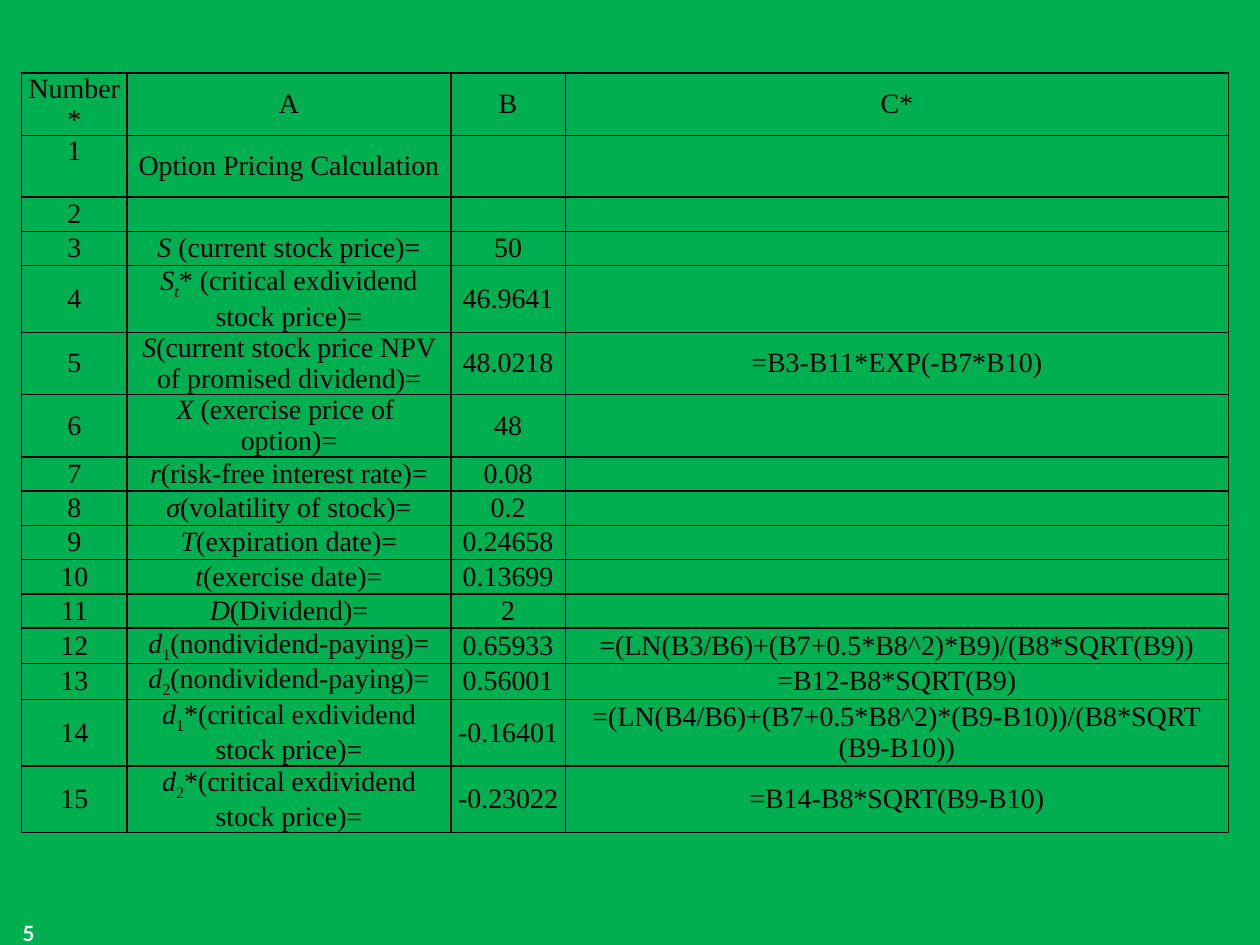
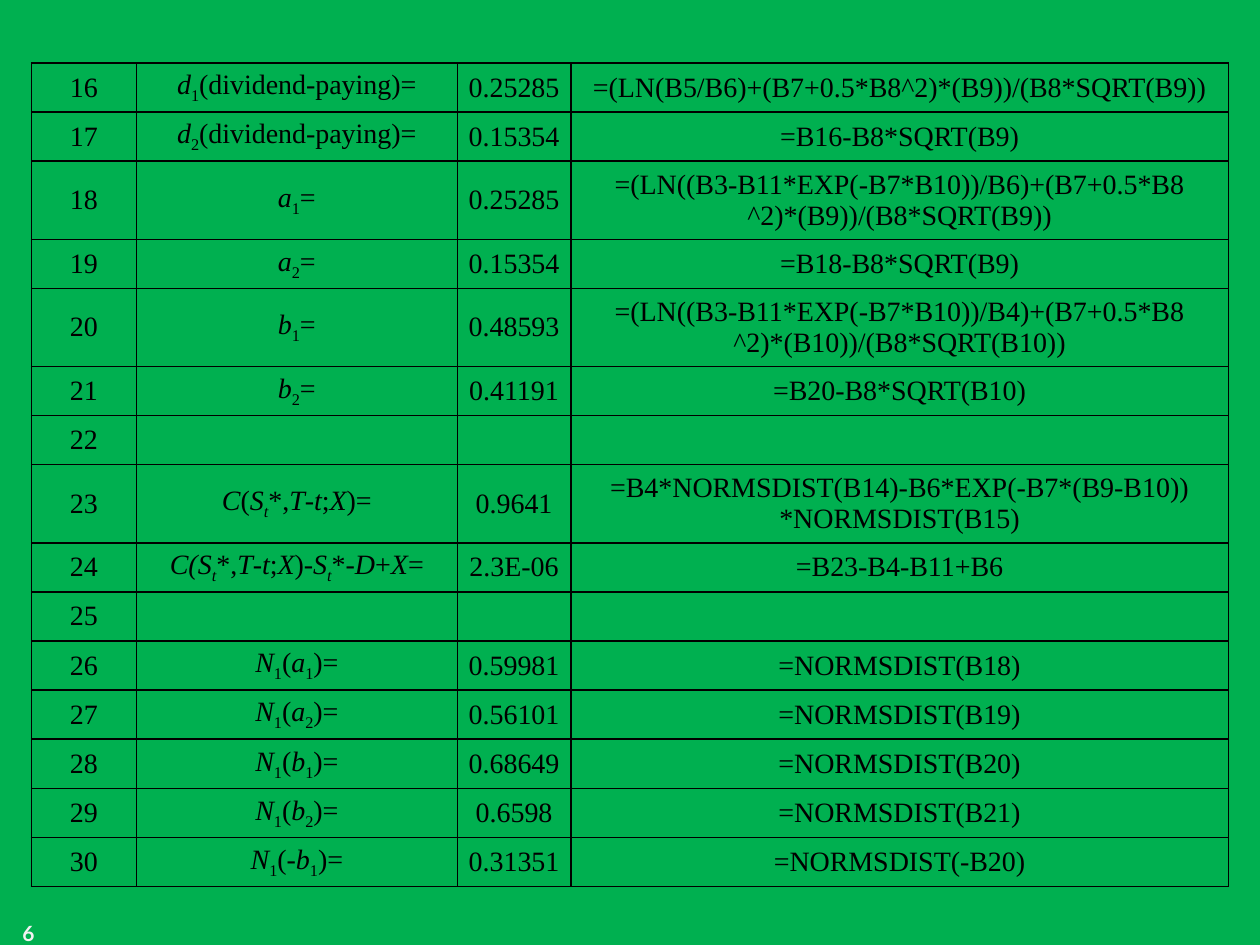
"""Build two slides that tabulate an option pricing worksheet."""
import dataclasses
import itertools

import lxml.etree
import pptx
import pptx.dml.color
import pptx.enum.text
import pptx.oxml.ns
import pptx.util


@dataclasses.dataclass(frozen=True)
class Theme:
    """Colours, fonts and sizes shared by the slides."""
    background: str = "00B050"
    ink: str = "000000"
    page_ink: str = "F2F2F2"
    table_font: str = "Times New Roman"
    page_font: str = "Lato"
    table_size: int = 16
    page_size: int = 12
    border: int = 1
    side_margin: float = 0.02
    subscript: int = -25000


THEME = Theme()
SLIDE_SIZE = (10, 7.5)
PAGE_NUMBER_BOX = (0.08, 7.26, 2.33, 0.4)
COLUMN_PERCENTS = (8.76, 26.82, 9.48, 54.94)

# In cell text, {braces} hold italics and _ lowers the next letter.
INPUT_ROWS = [
    ("Number*", "A", "B", "C*"),
    ("1", "Option Pricing Calculation", "", ""),
    ("2", "", "", ""),
    ("3", "{S} (current stock price)=", "50", ""),
    ("4", "{S_t}* (critical exdividend stock price)=", "46.9641", ""),
    ("5", "{S}(current stock price NPV of promised dividend)=", "48.0218", "=B3-B11*EXP(-B7*B10)"),
    ("6", "{X} (exercise price of \noption)=", "48", ""),
    ("7", "{r}(risk-free interest rate)=", "0.08", ""),
    ("8", "{σ}(volatility of stock)=", "0.2", ""),
    ("9", "{T}(expiration date)=", "0.24658", ""),
    ("10", "{t}(exercise date)=", "0.13699", ""),
    ("11", "{D}(Dividend)=", "2", ""),
    ("12", "{d}_1(nondividend-paying)=", "0.65933", "=(LN(B3/B6)+(B7+0.5*B8^2)*B9)/(B8*SQRT(B9))"),
    ("13", "{d}_2(nondividend-paying)=", "0.56001", "=B12-B8*SQRT(B9)"),
    ("14", "{d}_1*(critical exdividend stock price)=", "-0.16401",
     "=(LN(B4/B6)+(B7+0.5*B8^2)*(B9-B10))/(B8*SQRT\n(B9-B10))"),
    ("15", "{d}_2*(critical exdividend stock price)=", "-0.23022", "=B14-B8*SQRT(B9-B10)"),
]
RESULT_ROWS = [
    ("16", "{d}_1(dividend-paying)=", "0.25285", "=(LN(B5/B6)+(B7+0.5*B8^2)*(B9))/(B8*SQRT(B9))"),
    ("17", "{d}_2(dividend-paying)=", "0.15354", "=B16-B8*SQRT(B9)"),
    ("18", "{a}_1=", "0.25285", "=(LN((B3-B11*EXP(-B7*B10))/B6)+(B7+0.5*B8\n^2)*(B9))/(B8*SQRT(B9))"),
    ("19", "{a}_2=", "0.15354", "=B18-B8*SQRT(B9)"),
    ("20", "{b}_1=", "0.48593", "=(LN((B3-B11*EXP(-B7*B10))/B4)+(B7+0.5*B8\n^2)*(B10))/(B8*SQRT(B10))"),
    ("21", "{b}_2=", "0.41191", "=B20-B8*SQRT(B10)"),
    ("22", "", "", ""),
    ("23", "{C}({S_t}*,{T}-{t};{X})=", "0.9641", "=B4*NORMSDIST(B14)-B6*EXP(-B7*(B9-B10))\n*NORMSDIST(B15)"),
    ("24", "{C(S_t}*,{T}-{t};{X})-{S_t}*-{D}+{X}=", "2.3E-06", "=B23-B4-B11+B6"),
    ("25", "", "", ""),
    ("26", "{N}_1({a}_1)=", "0.59981", "=NORMSDIST(B18)"),
    ("27", "{N}_1({a}_2)=", "0.56101", "=NORMSDIST(B19)"),
    ("28", "{N}_1({b}_1)=", "0.68649", "=NORMSDIST(B20)"),
    ("29", "{N}_1({b}_2)=", "0.6598", "=NORMSDIST(B21)"),
    ("30", "{N}_1(-{b}_1)=", "0.31351", "=NORMSDIST(-B20)"),
]
SLIDES = [
    {"page": "5", "rows": INPUT_ROWS, "corner": (0.17, 0.58), "width": 9.58,
     "line": 0.25, "extra_line": 0.24, "subscript": 0.03, "two_line_rows": (0, 1, 4, 5, 6, 14, 15),
     "top_cells": [(1, 0)]},
    {"page": "6", "rows": RESULT_ROWS, "corner": (0.25, 0.5), "width": 9.5,
     "line": 0.39, "extra_line": 0.23, "subscript": 0, "two_line_rows": (2, 4, 7),
     "top_cells": []},
]


def split_markup(text):
    """Return (words, italic, lowered) for each run in the marked text."""
    letters, italic, lowered = [], False, False
    for letter in text:
        if letter in "{}":
            italic = letter == "{"
        elif letter == "_":
            lowered = True
        else:
            letters.append((letter, italic, lowered))
            lowered = False
    groups = itertools.groupby(letters, key=lambda item: item[1:])
    return [("".join(item[0] for item in group), *style) for style, group in groups]


def style_font(font, name, size, color):
    """Set the typeface, size and colour of a font."""
    font.name = name
    font.size = pptx.util.Pt(size)
    font.color.rgb = pptx.dml.color.RGBColor.from_string(color)


def add_borders(cell):
    """Draw a thin line on all four sides of a cell."""
    properties = cell._tc.get_or_add_tcPr()
    for side in ("a:lnL", "a:lnR", "a:lnT", "a:lnB"):
        line = lxml.etree.SubElement(properties, pptx.oxml.ns.qn(side), w=str(pptx.util.Pt(THEME.border)))
        fill = lxml.etree.SubElement(line, pptx.oxml.ns.qn("a:solidFill"))
        lxml.etree.SubElement(fill, pptx.oxml.ns.qn("a:srgbClr"), val=THEME.ink)


def fill_cell(cell, text, anchor):
    """Write marked text into a cell and format it."""
    add_borders(cell)
    cell.fill.background()
    cell.vertical_anchor = anchor
    cell.margin_left = cell.margin_right = pptx.util.Inches(THEME.side_margin)
    cell.margin_top = cell.margin_bottom = 0
    for index, line in enumerate(text.split("\n")):
        paragraph = cell.text_frame.add_paragraph() if index else cell.text_frame.paragraphs[0]
        paragraph.alignment = pptx.enum.text.PP_ALIGN.CENTER
        for words, italic, lowered in split_markup(line):
            run = paragraph.add_run()
            run.text = words
            style_font(run.font, THEME.table_font, THEME.table_size, THEME.ink)
            run.font.italic = italic
            if lowered:
                run.font._element.set("baseline", str(THEME.subscript))
        if not line:
            lxml.etree.SubElement(paragraph._p, pptx.oxml.ns.qn("a:endParaRPr"), sz=str(THEME.table_size * 100))


def row_height(content, index):
    """Return the height of a row from its lines and subscripts."""
    height = content["line"]
    if index in content["two_line_rows"]:
        height += content["extra_line"]
    if "_" in content["rows"][index][1]:
        height += content["subscript"]
    return pptx.util.Inches(height)


def add_worksheet(slide, content):
    """Add the worksheet table to a slide."""
    rows = content["rows"]
    heights = [row_height(content, index) for index in range(len(rows))]
    left, top, width = map(pptx.util.Inches, (*content["corner"], content["width"]))
    table = slide.shapes.add_table(len(rows), len(COLUMN_PERCENTS), left, top, width, sum(heights)).table
    table.first_row = table.horz_banding = False
    for column, percent in zip(table.columns, COLUMN_PERCENTS):
        column.width = int(width * percent / 100)
    for row_index, row in enumerate(rows):
        table.rows[row_index].height = heights[row_index]
        for column_index, text in enumerate(row):
            at_top = (row_index, column_index) in content["top_cells"]
            anchor = pptx.enum.text.MSO_ANCHOR.TOP if at_top else pptx.enum.text.MSO_ANCHOR.MIDDLE
            fill_cell(table.cell(row_index, column_index), text, anchor)


def add_page_number(slide, page):
    """Add the page number at the lower left."""
    text_frame = slide.shapes.add_textbox(*map(pptx.util.Inches, PAGE_NUMBER_BOX)).text_frame
    text_frame.word_wrap = True
    text_frame.text = page
    font = text_frame.paragraphs[0].runs[0].font
    style_font(font, THEME.page_font, THEME.page_size, THEME.page_ink)
    font.bold = True


def main():
    """Build and save the presentation."""
    presentation = pptx.Presentation()
    presentation.slide_width, presentation.slide_height = map(pptx.util.Inches, SLIDE_SIZE)
    background = presentation.slide_master.background.fill
    background.solid()
    background.fore_color.rgb = pptx.dml.color.RGBColor.from_string(THEME.background)
    for content in SLIDES:
        slide = presentation.slides.add_slide(presentation.slide_layouts[6])
        add_worksheet(slide, content)
        add_page_number(slide, content["page"])
    presentation.save("out.pptx")


if __name__ == "__main__":
    main()
